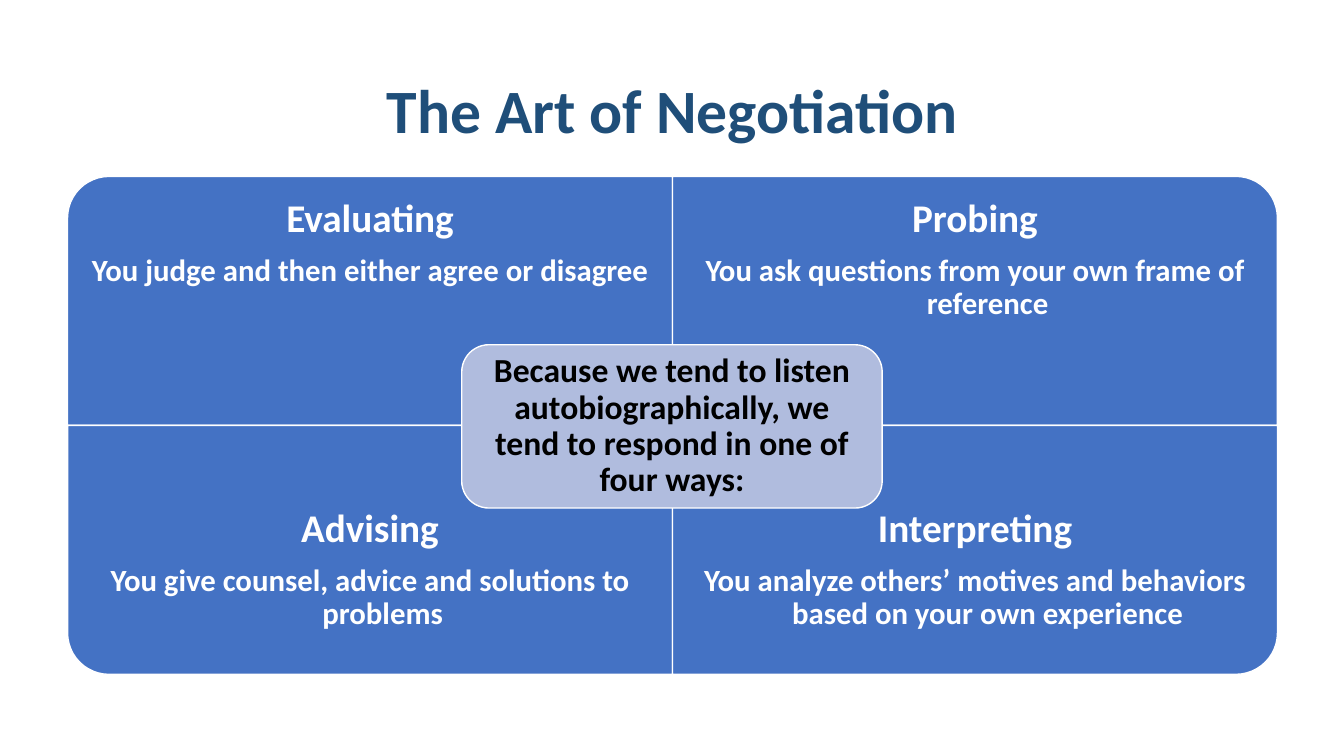
from pptx import Presentation
from pptx import util as u
from pptx.dml.color import RGBColor
from pptx.enum import shapes, text

LEFT, TOP, WIDE, HIGH = 0.67, 1.75, 6, 2.47
TEXT_H = 1.86
WHITE, BLUE, PALE, NAVY, BLACK = "FFFFFF", "4472C4", "B0BCDE", "1F4E79", "000000"

# heading, advice, column, row, rotation
WAYS = [
    ("Evaluating", "You judge and then either agree or disagree", 0, 0, 270),
    ("Probing", "You ask questions from your own frame of reference", 1, 0, 0),
    ("Advising", "You give counsel, advice and solutions to problems", 0, 1, 180),
    ("Interpreting", "You analyze others’ motives and behaviors "
     "based on your own experience", 1, 1, 90),
]


def hue(code):
    return RGBColor.from_string(code)


def add_block(slide, kind, x, y, w, h, fill, turn=0):
    """Add a white-edged shape that covers x, y, w, h once turned."""
    if turn % 180:
        x, y, w, h = x + (w - h) / 2, y + (h - w) / 2, h, w
    block = slide.shapes.add_shape(kind, *map(u.Inches, (x, y, w, h)))
    block.rotation = turn
    block.shadow.inherit = False
    block.fill.solid()
    block.fill.fore_color.rgb = hue(fill)
    block.line.color.rgb = hue(WHITE)
    block.line.width = u.Pt(1)
    return block


def set_frame(shape, inset, anchor):
    frame = shape.text_frame
    frame.word_wrap = True
    frame.vertical_anchor = anchor
    frame.margin_left = frame.margin_right = u.Inches(inset)
    frame.margin_top = frame.margin_bottom = u.Inches(inset)
    return frame


def add_text(para, words, size, color, after=0):
    para.alignment = text.PP_ALIGN.CENTER
    para.line_spacing = 0.9
    para.space_after = u.Pt(after)
    run = para.add_run()
    run.text = words
    font = run.font
    font.name, font.size, font.bold = "Calibri", u.Pt(size), True
    font.color.rgb = hue(color)


def add_box(slide, x, y, w, h):
    return slide.shapes.add_textbox(*map(u.Inches, (x, y, w, h)))


def add_title(slide, words):
    box = add_box(slide, 0.92, 0.4, 11.5, 1.45)
    frame = set_frame(box, 0.1, text.MSO_ANCHOR.MIDDLE)
    add_text(frame.paragraphs[0], words, 44, NAVY)


def add_way(slide, head, advice, col, row, turn):
    x, y = LEFT + col * WIDE, TOP + row * HIGH
    add_block(slide, shapes.MSO_SHAPE.ROUND_1_RECTANGLE, x, y, WIDE, HIGH, BLUE, turn)
    box = add_box(slide, x, y + row * (HIGH - TEXT_H), WIDE, TEXT_H)
    frame = set_frame(box, 0.22, text.MSO_ANCHOR.TOP)
    add_text(frame.paragraphs[0], head, 28, WHITE, 9.8)
    para = frame.add_paragraph()
    para.level = 1
    props = para._p.get_or_add_pPr()
    props.set("marL", str(u.Inches(0.25)))
    props.set("indent", str(u.Inches(-0.25)))
    add_text(para, advice, 22, WHITE, 3.3)


def add_core(slide, words):
    core = add_block(slide, shapes.MSO_SHAPE.ROUNDED_RECTANGLE,
                     4.58, 3.42, 4.17, 1.62, PALE)
    frame = set_frame(core, 0.1, text.MSO_ANCHOR.MIDDLE)
    add_text(frame.paragraphs[0], words, 24, BLACK)


def main():
    deck = Presentation()
    deck.slide_width, deck.slide_height = u.Inches(13.33), u.Inches(7.5)
    slide = deck.slides.add_slide(deck.slide_layouts[6])
    add_title(slide, "The Art of Negotiation")
    for way in WAYS:
        add_way(slide, *way)
    add_core(slide, "Because we tend to listen autobiographically, "
             "we tend to respond in one of four ways:")
    deck.save("out.pptx")


if __name__ == "__main__":
    main()
